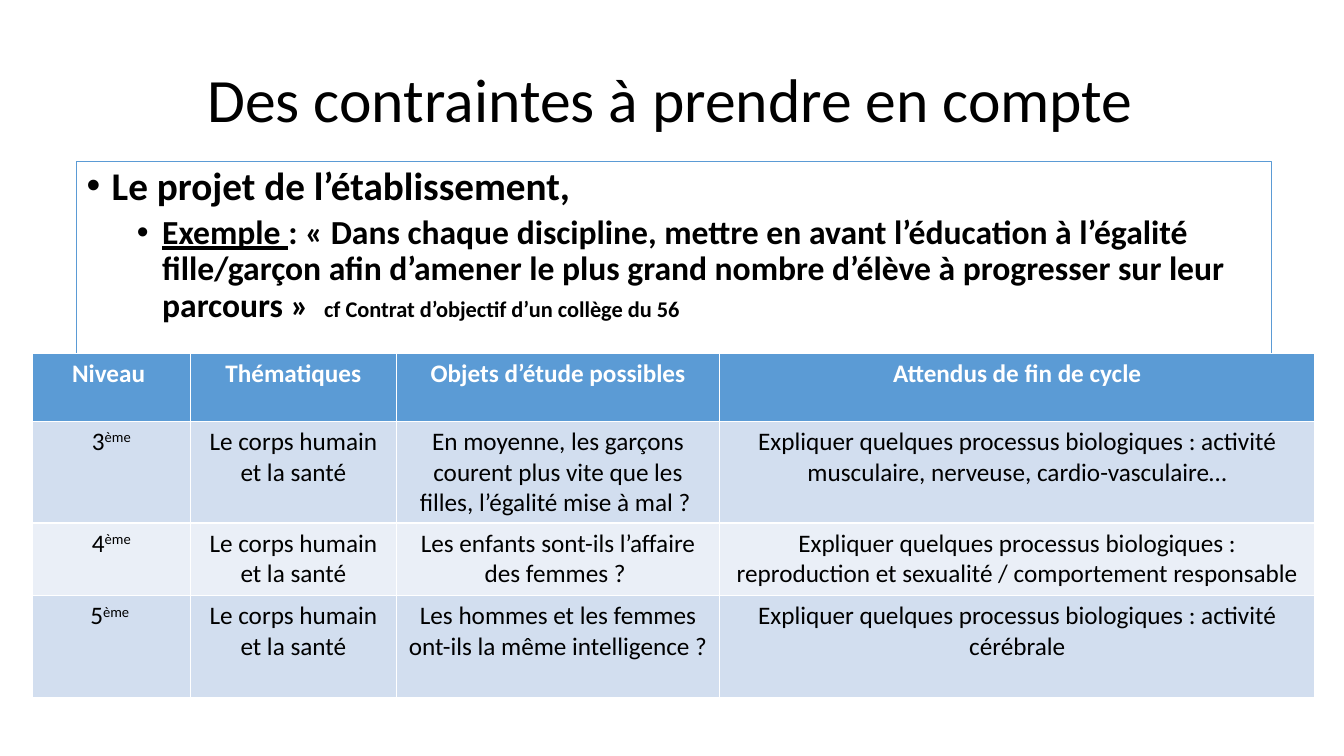
from lxml import etree
from pptx import Presentation
from pptx import util as u
from pptx.dml import color
from pptx.enum import shapes, text
from pptx.oxml import ns

hues = {
    "ink": "000000",
    "paper": "FFFFFF",
    "blue": "5B9BD5",
    "odd": "D2DEEF",
    "even": "EAEFF7",
}


def tint(name):
    return color.RGBColor.from_string(hues[name])


def write(para, words, size, hue="ink", bold=False):
    run = para.add_run()
    run.text = words
    run.font.name = "Calibri"
    run.font.size = u.Pt(size)
    run.font.bold = bold
    run.font.color.rgb = tint(hue)
    return run


deck = Presentation()
deck.slide_width = u.Inches(13.33)
deck.slide_height = u.Inches(7.5)
slide = deck.slides.add_slide(deck.slide_layouts[6])

title = slide.shapes.add_textbox(
    u.Inches(0.9), u.Inches(0.29), u.Inches(11.5), u.Inches(1.45)
).text_frame
title.word_wrap = True
title.vertical_anchor = text.MSO_ANCHOR.MIDDLE
head = title.paragraphs[0]
head.alignment = text.PP_ALIGN.CENTER
head.line_spacing = 0.9
write(head, "Des contraintes à prendre en compte", 44)

box = slide.shapes.add_shape(
    shapes.MSO_SHAPE.RECTANGLE,
    u.Inches(0.76), u.Inches(1.6), u.Inches(11.85), u.Inches(5.28),
)
box.shadow.inherit = False
box.fill.solid()
box.fill.fore_color.rgb = tint("paper")
box.line.color.rgb = tint("blue")
box.line.width = u.Pt(1)
frame = box.text_frame
frame.word_wrap = True
frame.vertical_anchor = text.MSO_ANCHOR.TOP

points = [
    (0.25, 10, [("Le projet de l’établissement,", 28, False)]),
    (0.75, 5, [
        ("Exemple ", 24, True),
        (": « Dans chaque discipline, mettre en avant l’éducation à l’égalité "
         "fille/garçon afin d’amener le plus grand nombre d’élève à progresser "
         "sur leur parcours »  ", 24, False),
        ("cf Contrat d’objectif d’un collège du 56", 16, False),
    ]),
]
for level, (left, gap, parts) in enumerate(points):
    para = frame.add_paragraph() if level else frame.paragraphs[0]
    para.level = level
    para.alignment = text.PP_ALIGN.LEFT
    para.line_spacing = 0.9
    para.space_before = u.Pt(gap)
    props = para._p.get_or_add_pPr()
    props.set("marL", str(u.Inches(left)))
    props.set("indent", str(u.Inches(-0.25)))
    etree.SubElement(props, ns.qn("a:buFont")).set("typeface", "Arial")
    etree.SubElement(props, ns.qn("a:buChar")).set("char", "•")
    for words, size, under in parts:
        write(para, words, size, bold=True).font.underline = under

theme = "Le corps humain et la santé"
goal = "Expliquer quelques processus biologiques : "
rows = [
    ("Niveau ", "Thématiques", "Objets d’étude possibles",
     "Attendus de fin de cycle"),
    ("3", theme,
     "En moyenne, les garçons courent plus vite que les filles, "
     "l’égalité mise à mal ? ",
     goal + "activité musculaire, nerveuse, cardio-vasculaire…"),
    ("4", theme, "Les enfants sont-ils l’affaire des femmes ? ",
     goal + "reproduction et sexualité / comportement responsable"),
    ("5", theme, "Les hommes et les femmes ont-ils la même intelligence ?",
     goal + "activité cérébrale"),
]
widths = [1.57, 2.04, 3.21, 5.9]
heights = [0.67, 1.01, 0.72, 1.01]
table = slide.shapes.add_table(
    len(rows), len(widths), u.Inches(0.32), u.Inches(3.51),
    u.Inches(sum(widths)), u.Inches(sum(heights)),
).table
for col, width in zip(table.columns, widths):
    col.width = u.Inches(width)
for r, (row, height) in enumerate(zip(rows, heights)):
    table.rows[r].height = u.Inches(height)
    top = r == 0
    fill = "blue" if top else "odd" if r % 2 else "even"
    for c, words in enumerate(row):
        cell = table.cell(r, c)
        cell.fill.solid()
        cell.fill.fore_color.rgb = tint(fill)
        para = cell.text_frame.paragraphs[0]
        para.alignment = text.PP_ALIGN.CENTER
        write(para, words, 18, "paper" if top else "ink", top)
        if c == 0 and not top:
            mark = "ème " if r == 3 else "ème"
            write(para, mark, 18).font._element.set("baseline", "30000")

deck.save("out.pptx")
